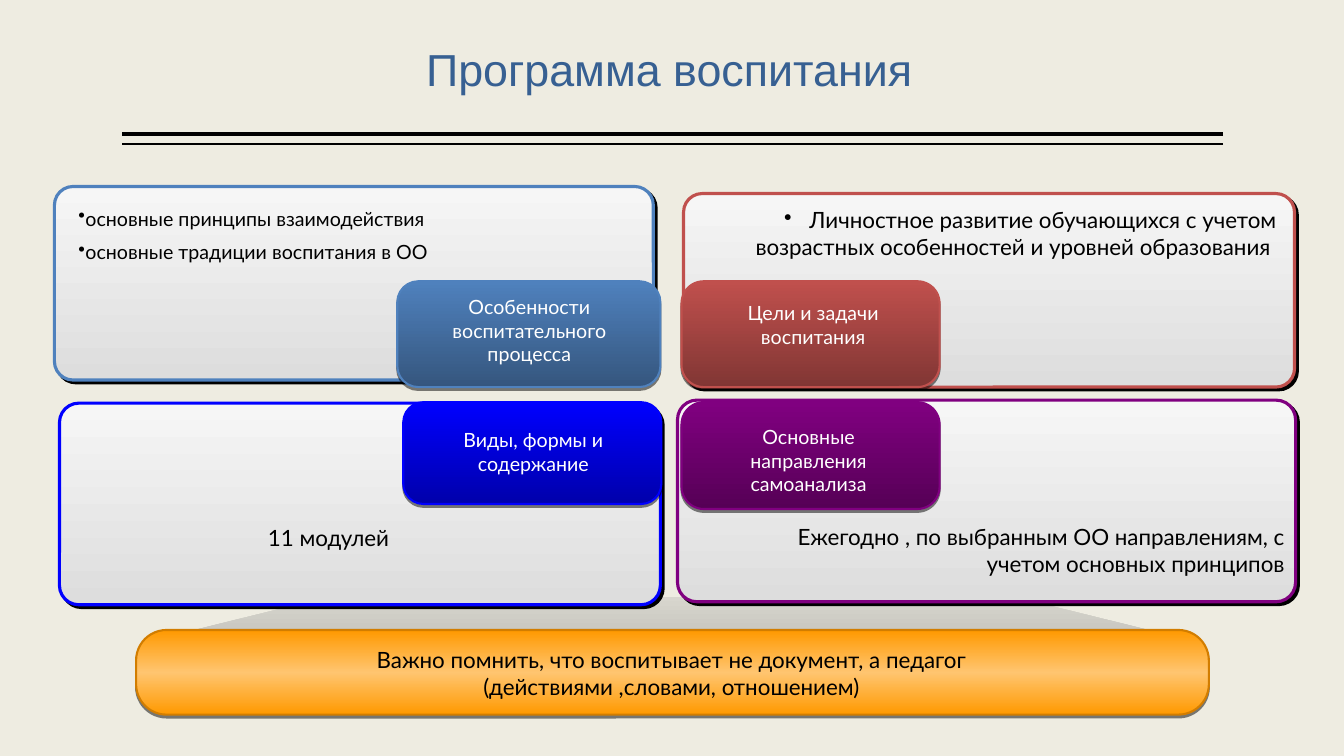
from dataclasses import dataclass

from lxml import etree
from pptx import Presentation
from pptx import util as u
from pptx.dml import color
from pptx.enum import shapes, text
from pptx.oxml import ns

COLORS = {
    "background": "EEECE1",
    "title": "376092",
    "black": "000000",
    "white": "FFFFFF",
    "panel_top": "F6F6F6",
    "panel_bottom": "DDDDDD",
    "blue": "4F81BD",
    "blue_dark": "35567E",
    "red": "C0504D",
    "red_dark": "813634",
    "bright": "0000FF",
    "bright_dark": "0000AB",
    "purple": "800080",
    "purple_dark": "560056",
    "orange": "FF9900",
    "orange_light": "FFC570",
    "orange_line": "D27D00",
    "beam_top": "D8D6CE",
    "beam_bottom": "C4C3BC",
}
LEFT, CENTER, RIGHT = text.PP_ALIGN.LEFT, text.PP_ALIGN.CENTER, text.PP_ALIGN.RIGHT
Box = tuple[float, float, float, float]


@dataclass(frozen=True)
class Shadow:
    opacity: int
    distance: float
    angle: int


@dataclass(frozen=True)
class Card:
    box: Box
    corner: float
    gradient: tuple[str, ...]
    line: str
    line_width: float
    shadow: Shadow


@dataclass(frozen=True)
class Caption:
    box: Box
    lines: tuple[str, ...]
    size: int = 16
    align: text.PP_ALIGN = LEFT
    color: str = "black"
    bullet_indent: float | None = None
    space_before: float = 0
    margin_top: float = 0.05
    shadowed: bool = False


PANEL_SHADOW = Shadow(100, 2.8, 45)
LABEL_SHADOW = Shadow(50, 2, 90)
TEXT_SHADOW = Shadow(100, 1.5, 45)


def panel(box: Box, line: str) -> Card:
    return Card(box, 0.096, ("panel_top", "panel_bottom"), line, 2.25, PANEL_SHADOW)


def label(box: Box, corner: float, name: str) -> Card:
    return Card(box, corner, (name, f"{name}_dark"), name, 1.5, LABEL_SHADOW)


def label_text(box: Box, words: str, margin_top: float = 0.05) -> Caption:
    return Caption(box, (words,), 14, CENTER, "white", margin_top=margin_top, shadowed=True)


CARDS = [
    panel((0.54, 1.85, 5.94, 1.92), "blue"),
    panel((6.78, 1.92, 6.06, 1.92), "red"),
    panel((0.59, 4, 5.96, 2), "bright"),
    panel((6.72, 3.97, 6.13, 2), "purple"),
    label((3.94, 2.79, 2.61, 1.05), 0.198, "blue"),
    label((6.76, 2.79, 2.56, 1.05), 0.209, "red"),
    label((4, 3.99, 2.56, 1.01), 0.198, "bright"),
    label((6.76, 3.99, 2.56, 1.06), 0.209, "purple"),
    Card((1.35, 6.25, 10.64, 0.84), 0.36, ("orange", "orange_light", "orange"),
         "orange_line", 1.5, LABEL_SHADOW),
]
CAPTIONS = [
    label_text((4.06, 2.88, 2.38, 0.81), "Особенности воспитательного процесса"),
    label_text((6.87, 2.89, 2.39, 0.64), "Цели и задачи воспитания", 0.1),
    label_text((4.14, 4.15, 2.3, 0.64), "Виды, формы и содержание", 0.1),
    label_text((6.87, 4.17, 2.3, 0.81), "Основные направления самоанализа"),
    Caption((0.68, 2, 5.95, 0.69),
            ("основные принципы взаимодействия", "основные традиции воспитания в ОО"),
            14, bullet_indent=0, space_before=7),
    Caption((2.56, 5.15, 3.33, 0.37), ("11 модулей",)),
    Caption((7.13, 2, 5.63, 0.64),
            ("Личностное развитие обучающихся с учетом возрастных особенностей "
             "и уровней образования ",), align=RIGHT, bullet_indent=0.25),
    Caption((7.15, 5.14, 5.69, 1.85),
            ("Ежегодно , по выбранным ОО направлениям, с учетом основных принципов",),
            align=RIGHT),
    Caption((2.44, 6.36, 8.44, 0.64),
            ("Важно помнить, что воспитывает не документ, а педагог",
             "(действиями ,словами, отношением)"), align=CENTER),
]


def rgb(name: str) -> color.RGBColor:
    return color.RGBColor.from_string(COLORS[name])


def inches(box: Box) -> list[u.Length]:
    return [u.Inches(value) for value in box]


def add_child(parent, tag: str, **attributes):
    values = {key: str(value) for key, value in attributes.items()}
    return etree.SubElement(parent, ns.qn(tag), values)


def add_shadow(effects, shadow: Shadow) -> None:
    outer = add_child(effects, "a:outerShdw", blurRad=0, dist=int(u.Pt(shadow.distance)),
                      dir=shadow.angle * 60000, algn="ctr", rotWithShape=0)
    tint = add_child(outer, "a:srgbClr", val=COLORS["black"])
    add_child(tint, "a:alpha", val=shadow.opacity * 1000)


def fill_gradient(shape, names: tuple[str, ...]) -> None:
    shape.fill.gradient()
    shape.fill.gradient_angle = 270
    stops = shape.element.spPr.find(".//" + ns.qn("a:gsLst"))
    for stop in list(stops):
        stops.remove(stop)
    for index, name in enumerate(names):
        stop = add_child(stops, "a:gs", pos=100000 * index // (len(names) - 1))
        add_child(stop, "a:srgbClr", val=COLORS[name])


def add_rule(slide, top: float, width: float) -> None:
    rule = slide.shapes.add_connector(
        shapes.MSO_CONNECTOR.STRAIGHT, *inches((12.13, top, 1.21, top)))
    rule.line.color.rgb = rgb("black")
    rule.line.width = u.Pt(width)
    add_child(rule.element.spPr, "a:effectLst")


def add_beam(slide) -> None:
    builder = slide.shapes.build_freeform(u.Inches(1.49), u.Inches(6.36))
    corners = [(3.26, 5.92), (10.06, 5.92), (11.83, 6.36)]
    builder.add_line_segments([(u.Inches(x), u.Inches(y)) for x, y in corners])
    beam = builder.convert_to_shape()
    fill_gradient(beam, ("beam_top", "beam_bottom"))
    beam.line.fill.background()
    beam.shadow.inherit = False


def add_card(slide, card: Card) -> None:
    shape = slide.shapes.add_shape(shapes.MSO_SHAPE.ROUNDED_RECTANGLE, *inches(card.box))
    shape.adjustments[0] = card.corner
    fill_gradient(shape, card.gradient)
    shape.line.color.rgb = rgb(card.line)
    shape.line.width = u.Pt(card.line_width)
    shape.shadow.inherit = False
    add_shadow(shape.element.spPr.find(ns.qn("a:effectLst")), card.shadow)


def add_caption(slide, caption: Caption) -> None:
    frame = slide.shapes.add_textbox(*inches(caption.box)).text_frame
    frame.word_wrap = True
    frame.margin_top = u.Inches(caption.margin_top)
    frame.text = "\n".join(caption.lines)
    for index, paragraph in enumerate(frame.paragraphs):
        paragraph.alignment = caption.align
        if caption.bullet_indent is not None:
            properties = paragraph._p.get_or_add_pPr()
            indent = int(u.Inches(caption.bullet_indent))
            properties.set("marL", str(indent))
            properties.set("indent", str(-indent))
            add_child(properties, "a:buChar", char="•")
        if index:
            paragraph.space_before = u.Pt(caption.space_before)
        paragraph.font.size = u.Pt(caption.size)
        paragraph.font.name = "Lato"
        paragraph.font.color.rgb = rgb(caption.color)
        if caption.shadowed:
            for run in paragraph.runs:
                effects = add_child(run._r.get_or_add_rPr(), "a:effectLst")
                add_shadow(effects, TEXT_SHADOW)


def add_title(slide) -> None:
    title = slide.shapes.title
    title.left, title.top, title.width, title.height = inches((1.18, -0.2, 10.92, 1.2))
    frame = title.text_frame
    frame.text = "Программа воспитания"
    frame.vertical_anchor = text.MSO_ANCHOR.BOTTOM
    frame.margin_left = frame.margin_right = 0
    paragraph = frame.paragraphs[0]
    paragraph.alignment = CENTER
    paragraph.line_spacing = 0.9
    paragraph.font.size = u.Pt(32)
    paragraph.font.name = "Arial"
    paragraph.font.color.rgb = rgb("title")


def main() -> None:
    presentation = Presentation()
    presentation.slide_width, presentation.slide_height = u.Inches(13.33), u.Inches(7.5)
    slide = presentation.slides.add_slide(presentation.slide_layouts[5])
    slide.background.fill.solid()
    slide.background.fill.fore_color.rgb = rgb("background")
    add_title(slide)
    for top, width in ((1.33, 3), (1.43, 1)):
        add_rule(slide, top, width)
    add_beam(slide)
    for card in CARDS:
        add_card(slide, card)
    for caption in CAPTIONS:
        add_caption(slide, caption)
    presentation.save("out.pptx")


if __name__ == "__main__":
    main()
